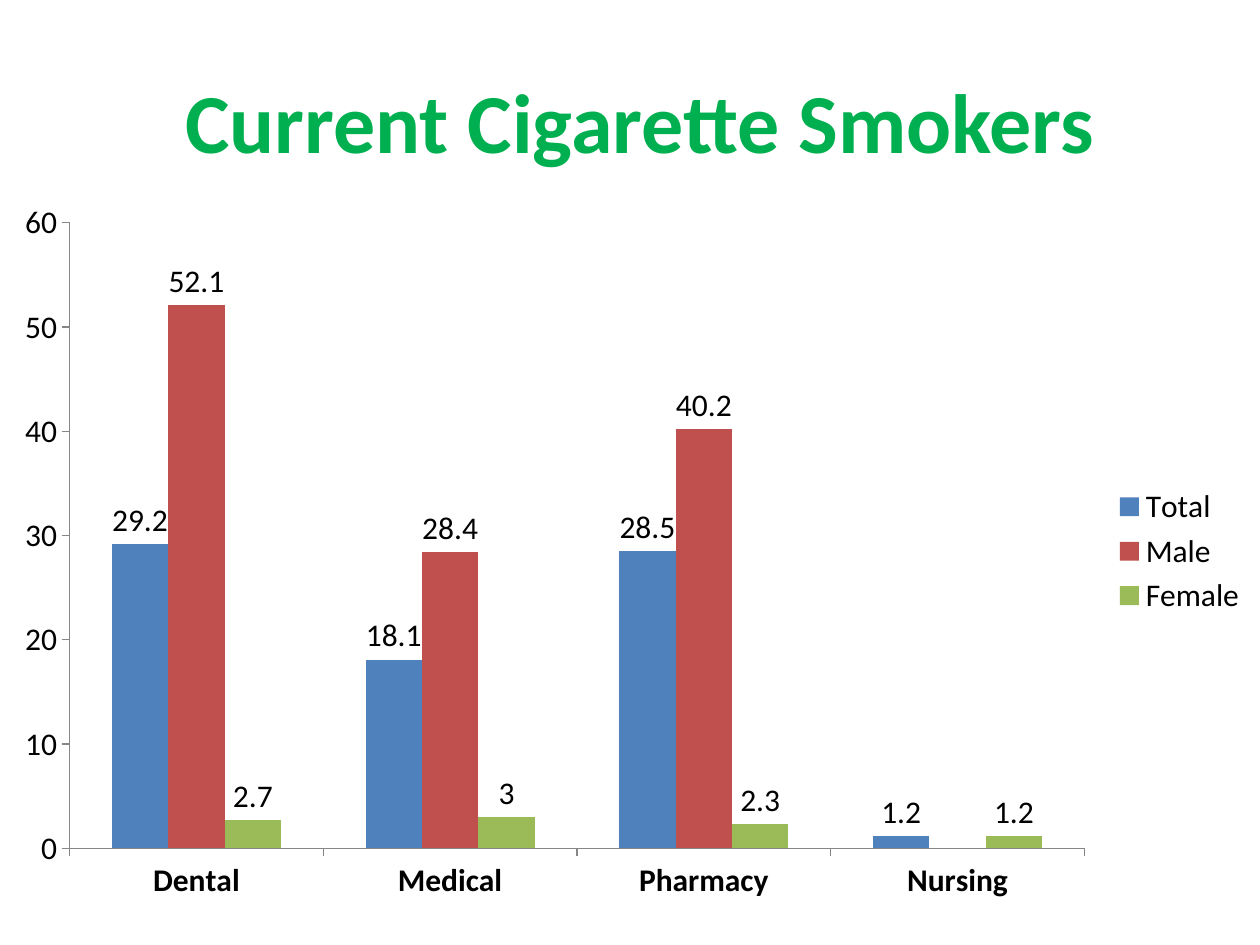
from pptx import Presentation
from pptx.chart.data import CategoryChartData
from pptx.dml.color import RGBColor
from pptx.enum.chart import XL_CHART_TYPE, XL_LABEL_POSITION, XL_LEGEND_POSITION, XL_TICK_MARK
from pptx.enum.text import MSO_ANCHOR, PP_ALIGN
from pptx.util import Inches, Pt

TITLE = "Current Cigarette Smokers"
FACULTIES = ["Dental", "Medical", "Pharmacy", "Nursing"]
SMOKERS = {
    "Total": [29.2, 18.1, 28.5, 1.2],
    "Male": [52.1, 28.4, 40.2, None],
    "Female": [2.7, 3, 2.3, 1.2],
}
THEME = {
    "font": "Calibri",
    "title_size": Pt(48),
    "chart_size": Pt(18),
    "title": RGBColor.from_string("00B050"),
    "text": RGBColor.from_string("000000"),
    "axis": RGBColor.from_string("868686"),
    "series": [RGBColor.from_string(code) for code in ("4F81BD", "C0504D", "9BBB59")],
}


def set_format(target, values):
    for name, value in values.items():
        setattr(target, name, value)


def style_font(font, size, color, bold=False):
    set_format(font, {"name": THEME["font"], "size": size, "bold": bold})
    font.color.rgb = color


def add_title(page):
    box = page.shapes.add_textbox(Inches(0.58), Inches(0.33), Inches(9), Inches(1.25))
    frame = box.text_frame
    set_format(frame, {"word_wrap": True, "vertical_anchor": MSO_ANCHOR.MIDDLE})
    para = frame.paragraphs[0]
    para.alignment = PP_ALIGN.CENTER
    span = para.add_run()
    span.text = TITLE
    style_font(span.font, THEME["title_size"], THEME["title"], bold=True)


def style_axis(axis, bold=False):
    set_format(axis, {
        "has_major_gridlines": False,
        "major_tick_mark": XL_TICK_MARK.OUTSIDE,
        "minor_tick_mark": XL_TICK_MARK.NONE,
    })
    axis.format.line.color.rgb = THEME["axis"]
    axis.format.line.width = Pt(0.75)
    style_font(axis.tick_labels.font, THEME["chart_size"], THEME["text"], bold)


def add_smoker_chart(page):
    data = CategoryChartData(number_format="General")
    data.categories = FACULTIES
    for name, values in SMOKERS.items():
        data.add_series(name, values)
    chart = page.shapes.add_chart(
        XL_CHART_TYPE.COLUMN_CLUSTERED, Inches(0), Inches(1.5), Inches(10), Inches(5.75), data
    ).chart
    set_format(chart, {"has_title": False, "has_legend": True})
    style_font(chart.font, THEME["chart_size"], THEME["text"])
    set_format(chart.legend, {"position": XL_LEGEND_POSITION.RIGHT, "include_in_layout": False})

    style_axis(chart.category_axis, bold=True)
    style_axis(chart.value_axis)
    set_format(chart.value_axis, {"minimum_scale": 0, "maximum_scale": 60, "major_unit": 10})

    plot = chart.plots[0]
    set_format(plot, {"gap_width": 150, "overlap": 0, "vary_by_categories": False})
    for series, color in zip(plot.series, THEME["series"]):
        series.format.fill.solid()
        series.format.fill.fore_color.rgb = color
        labels = series.data_labels
        set_format(labels, {"show_value": True, "position": XL_LABEL_POSITION.OUTSIDE_END})
        style_font(labels.font, THEME["chart_size"], THEME["text"])


def main():
    deck = Presentation()
    set_format(deck, {"slide_width": Inches(10), "slide_height": Inches(7.5)})
    page = deck.slides.add_slide(deck.slide_layouts[6])
    add_title(page)
    add_smoker_chart(page)
    deck.save("out.pptx")


if __name__ == "__main__":
    main()
